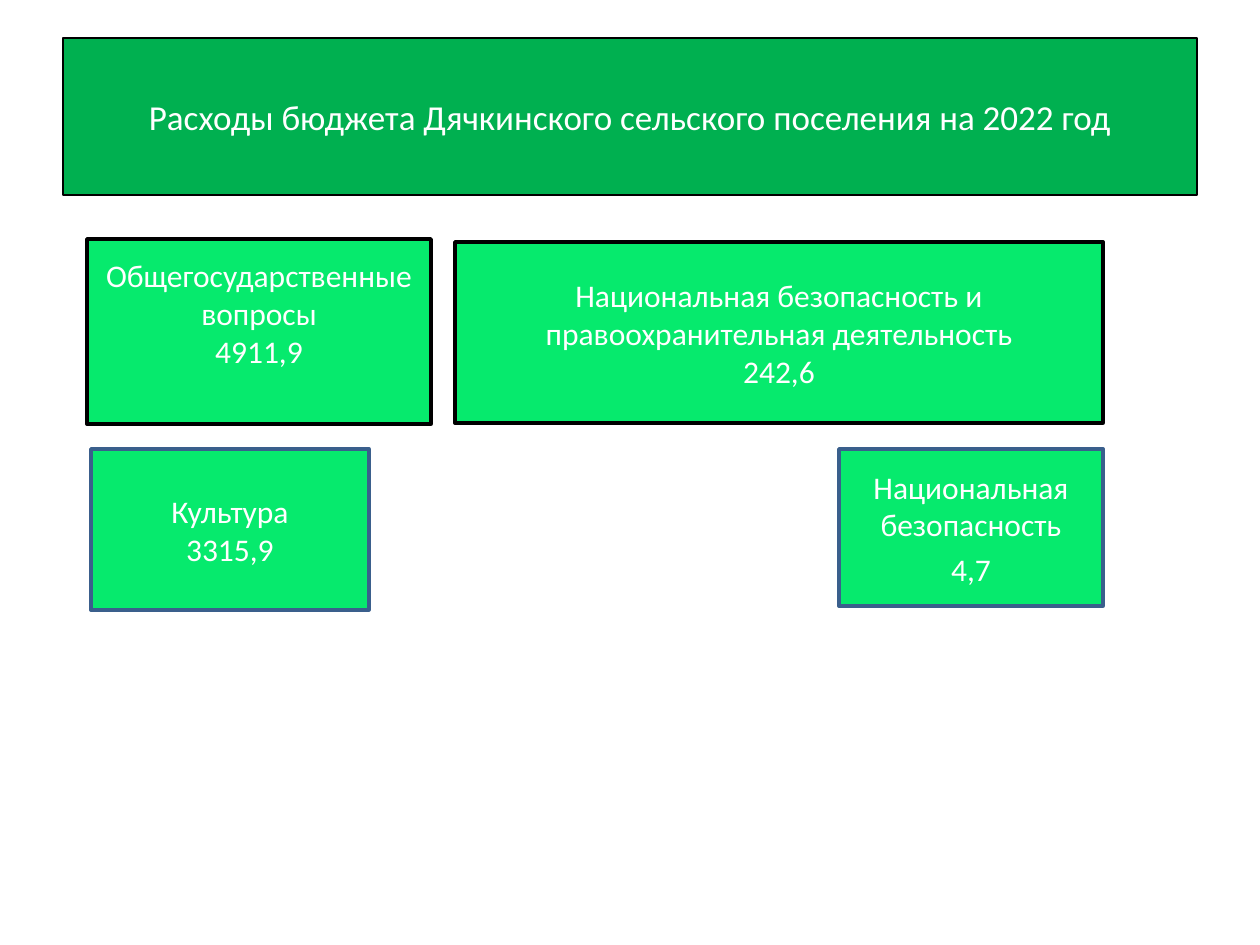
"""Build a slide of budget expenditure blocks for a rural settlement."""
from dataclasses import dataclass

from lxml import etree
from pptx import Presentation
from pptx.dml.color import RGBColor
from pptx.enum.shapes import MSO_SHAPE
from pptx.enum.text import MSO_ANCHOR, MSO_AUTO_SIZE, PP_ALIGN
from pptx.oxml.ns import qn
from pptx.util import Pt

RECTANGLE = MSO_SHAPE.RECTANGLE
MIDDLE = MSO_ANCHOR.MIDDLE
CENTER = PP_ALIGN.CENTER
NO_AUTOFIT = MSO_AUTO_SIZE.NONE
EMU_PER_PX = 914400 / 126


@dataclass(frozen=True)
class Theme:
    font: str = "Calibri"
    title_size: int = 20
    block_size: int = 18
    title_fill: str = "00B050"
    block_fill: str = "06EA6D"
    black: str = "000000"
    blue: str = "3A5F8C"
    text: str = "FFFFFF"
    title_line: float = 0.75
    block_line: float = 2


THEME = Theme()


def px(value):
    return round(value * EMU_PER_PX)


def format_block(shape, box, fill, line, line_width, size, texts):
    shape.left, shape.top, shape.width, shape.height = map(px, box)
    shape.fill.solid()
    shape.fill.fore_color.rgb = RGBColor.from_string(fill)
    shape.line.color.rgb = RGBColor.from_string(line)
    shape.line.width = Pt(line_width)
    frame = shape.text_frame
    frame.word_wrap = True
    frame.auto_size = NO_AUTOFIT
    frame.vertical_anchor = MIDDLE
    for index, text in enumerate(texts):
        paragraph = frame.add_paragraph() if index else frame.paragraphs[0]
        paragraph.alignment = CENTER
        run = paragraph.add_run()
        run.text = text
        run.font.name = THEME.font
        run.font.size = Pt(size)
        run.font.color.rgb = RGBColor.from_string(THEME.text)


presentation = Presentation()
presentation.slide_width, presentation.slide_height = px(1260), px(945)
slide = presentation.slides.add_slide(presentation.slide_layouts[1])
title, security = slide.placeholders

format_block(title, (63, 38, 1134, 157), THEME.title_fill, THEME.black,
             THEME.title_line, THEME.title_size,
             ["Расходы бюджета Дячкинского сельского поселения на 2022 год"])

blocks = [
    ((87, 239, 344, 185), THEME.black, 44,
     ["Общегосударственные вопросы", "4911,9"]),
    ((455, 242, 648, 181), THEME.black, 6,
     ["Национальная безопасность и правоохранительная деятельность", "242,6"]),
    ((91, 449, 278, 161), THEME.blue, 6, ["Культура", "3315,9"]),
]
for box, line, bottom_margin, texts in blocks:
    shape = slide.shapes.add_shape(RECTANGLE, *map(px, box))
    shape.shadow.inherit = False
    format_block(shape, box, THEME.block_fill, line, THEME.block_line,
                 THEME.block_size, texts)
    shape.text_frame.margin_bottom = px(bottom_margin)

format_block(security, (839, 449, 264, 157), THEME.block_fill, THEME.blue,
             THEME.block_line, THEME.block_size,
             ["Национальная безопасность", "4,7"])
for paragraph in security.text_frame.paragraphs:
    paragraph.space_before = Pt(3.6)
    properties = paragraph._p.get_or_add_pPr()
    properties.set("marL", "0")
    properties.set("indent", "0")
    etree.SubElement(properties, qn("a:buNone"))

presentation.save("out.pptx")
